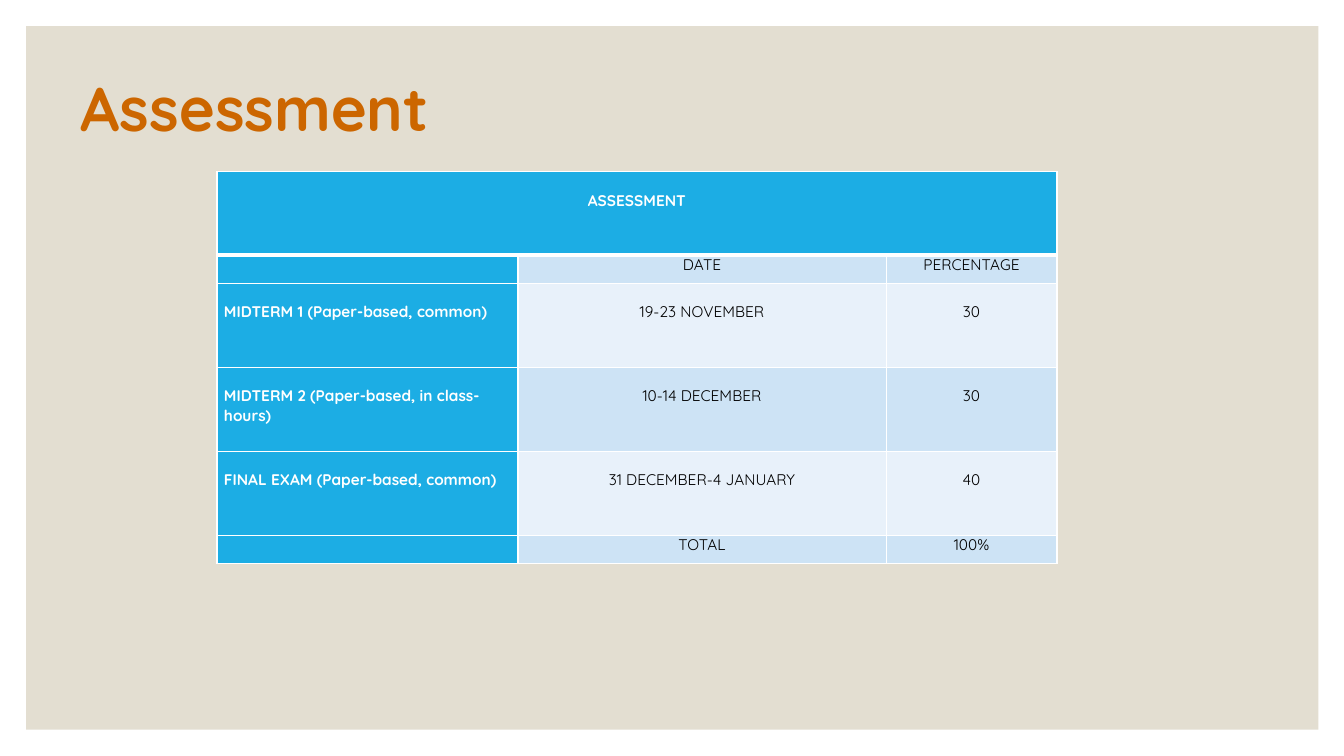
"""Build the course assessment slide with its schedule table."""
import lxml.etree
import pptx
import pptx.dml.color
import pptx.enum.shapes
import pptx.enum.text
import pptx.oxml.ns
import pptx.util

Pt = pptx.util.Pt
RGBColor = pptx.dml.color.RGBColor
Align = pptx.enum.text.PP_ALIGN
qn = pptx.oxml.ns.qn

TITLE = "Assessment"
ROWS = [
    ("ASSESSMENT", "", ""),
    ("", "DATE", "PERCENTAGE"),
    ("MIDTERM 1 (Paper-based, common)", "19-23 NOVEMBER", "30"),
    ("MIDTERM 2 (Paper-based, in class-hours)", "10-14 DECEMBER", "30"),
    ("FINAL EXAM (Paper-based, common)", "31 DECEMBER-4 JANUARY", "40"),
    ("", "TOTAL", "100%"),
]
COLUMN_WIDTHS = [215, 263, 122]
TALL, SHORT = 60, 20
ROW_HEIGHTS = [TALL, SHORT, TALL, TALL, TALL, SHORT]
LINE_HEIGHT = 13.75
FONT = "Quicksand"

WHITE = RGBColor(0xFF, 0xFF, 0xFF)
BLACK = RGBColor(0x00, 0x00, 0x00)
BEIGE = RGBColor(0xE3, 0xDE, 0xD1)
ORANGE = RGBColor(0xCC, 0x66, 0x00)
BLUE = RGBColor(0x1C, 0xAD, 0xE4)
BANDS = [RGBColor(0xE8, 0xF1, 0xFA), RGBColor(0xCD, 0xE3, 0xF5)]


def set_font(paragraph, size, color, bold):
    font = paragraph.font
    font.name, font.size, font.bold = FONT, Pt(size), bold
    font.color.rgb = color


def add_border(cell, side, width):
    properties = cell._tc.get_or_add_tcPr()
    line = lxml.etree.SubElement(properties, qn("a:ln" + side), w=str(Pt(width)))
    fill = lxml.etree.SubElement(line, qn("a:solidFill"))
    lxml.etree.SubElement(fill, qn("a:srgbClr"), val=str(WHITE))


def format_cell(cell, text, row, column):
    heading = row == 0 or column == 0
    for side in "LRTB":
        add_border(cell, side, 3 if (row, side) == (0, "B") else 1)
    cell.fill.solid()
    cell.fill.fore_color.rgb = BLUE if heading else BANDS[row % 2]
    cell.margin_left = cell.margin_right = Pt(5)
    cell.margin_top = Pt(LINE_HEIGHT if ROW_HEIGHTS[row] == TALL else 0)
    cell.margin_bottom = 0
    cell.text = text
    paragraph = cell.text_frame.paragraphs[0]
    if text:
        paragraph.alignment = Align.LEFT if row and heading else Align.CENTER
        set_font(paragraph, 11, WHITE if heading else BLACK, heading)
    else:
        lxml.etree.SubElement(paragraph._p, qn("a:endParaRPr"), sz="1100")


def add_title(slide):
    title = slide.shapes.title
    title.left, title.top, title.width, title.height = Pt(50.4), Pt(38), Pt(826), Pt(84)
    title.text = TITLE
    title.text_frame.vertical_anchor = pptx.enum.text.MSO_ANCHOR.MIDDLE
    paragraph = title.text_frame.paragraphs[0]
    paragraph.alignment = Align.LEFT
    paragraph.line_spacing = 0.9
    set_font(paragraph, 44, ORANGE, True)


def add_panel(slide):
    panel = slide.shapes.add_shape(
        pptx.enum.shapes.MSO_SHAPE.RECTANGLE, Pt(18.7), Pt(18.7), Pt(923), Pt(502.5))
    panel.shadow.inherit = False
    panel.fill.solid()
    panel.fill.fore_color.rgb = BEIGE
    panel.line.fill.background()
    slide.shapes.title.element.addprevious(panel.element)


def add_assessment_table(slide):
    table = slide.shapes.add_table(
        len(ROWS), len(COLUMN_WIDTHS), Pt(155), Pt(122.4),
        Pt(sum(COLUMN_WIDTHS)), Pt(sum(ROW_HEIGHTS))).table
    for column, width in zip(table.columns, COLUMN_WIDTHS):
        column.width = Pt(width)
    for row, height in zip(table.rows, ROW_HEIGHTS):
        row.height = Pt(height)
    for row, texts in enumerate(ROWS):
        for column, text in enumerate(texts):
            format_cell(table.cell(row, column), text, row, column)
    table.cell(0, 0).merge(table.cell(0, len(COLUMN_WIDTHS) - 1))


def main():
    presentation = pptx.Presentation()
    presentation.slide_width, presentation.slide_height = Pt(960), Pt(540)
    slide = presentation.slides.add_slide(presentation.slide_layouts[5])
    add_title(slide)
    add_panel(slide)
    add_assessment_table(slide)
    presentation.save("out.pptx")


if __name__ == "__main__":
    main()
